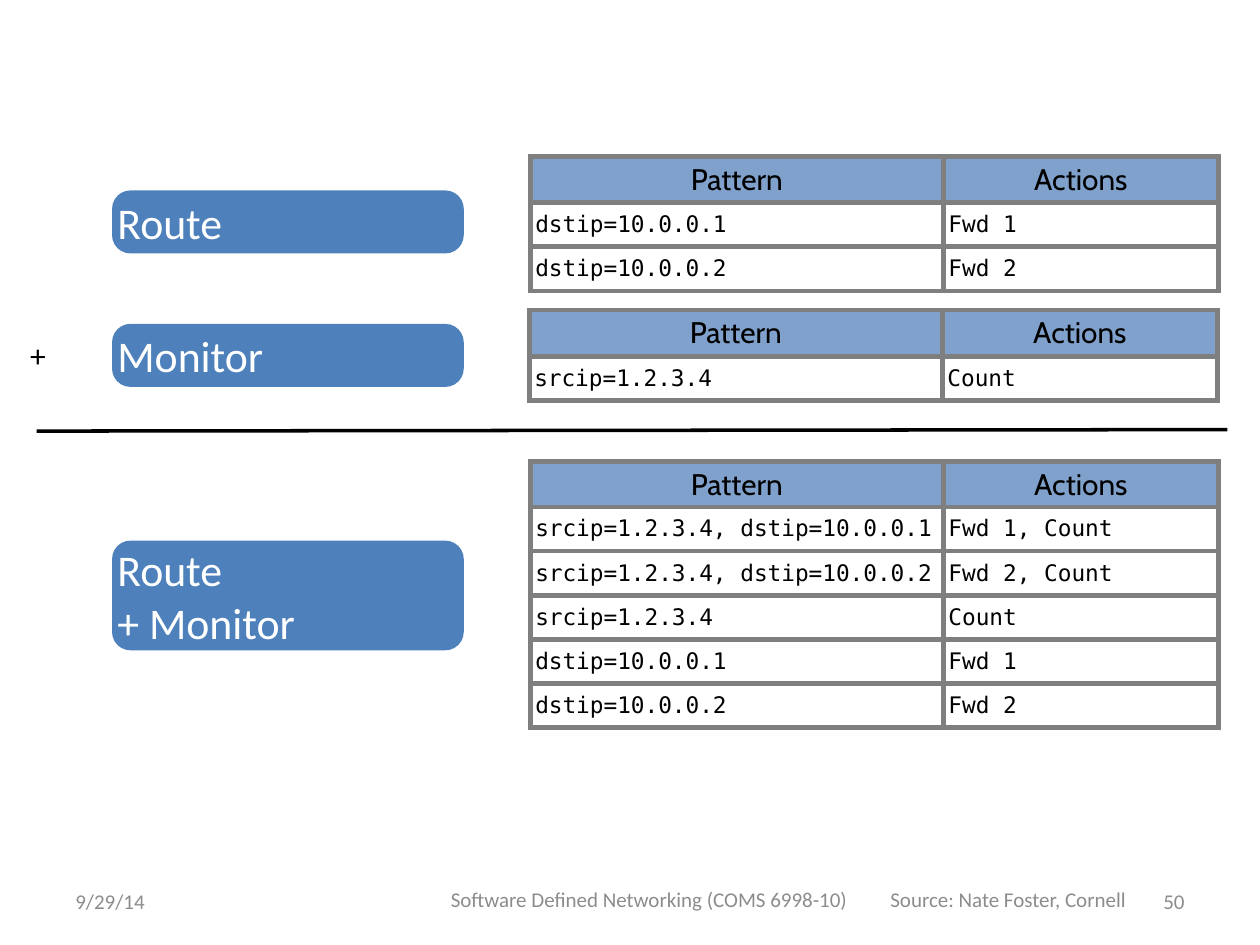
from collections import namedtuple
from dataclasses import dataclass

from lxml import etree
from pptx import Presentation
from pptx import util as u
from pptx.dml.color import RGBColor
from pptx.enum import shapes, text
from pptx.oxml import ns

Box = namedtuple("Box", "left top width height")
Cm = u.Cm
ALIGN = text.PP_ALIGN


@dataclass(frozen=True)
class Theme:
    pill: str = "4E81BC"
    header: str = "80A1CB"
    grid: str = "7F7F7F"
    muted: str = "8C8C8C"
    black: str = "000000"
    white: str = "FFFFFF"
    sans: str = "Calibri"
    heading: str = "Cabin"
    mono: str = "DejaVu Sans Mono"
    label_size: int = 25
    sign_size: int = 18
    header_size: int = 17
    cell_size: int = 13
    footer_size: int = 12
    grid_width: int = 3
    rule_width: int = 2


THEME = Theme()
PILL_LEFT, PILL_WIDTH, PILL_RADIUS = 2.26, 7.09, 0.37
COLUMNS = (8.33, 5.54)
HEADER_HEIGHT, ROW_HEIGHT = 0.92, 0.89
CELL_MARGIN = 0.1


def rgb(value):
    return RGBColor.from_string(value)


def write(frame, content, size, font=THEME.sans, color=THEME.black,
          align=ALIGN.LEFT, margin=None):
    frame.vertical_anchor = text.MSO_ANCHOR.MIDDLE
    if margin is not None:
        frame.margin_left = frame.margin_right = Cm(margin)
        frame.margin_top = frame.margin_bottom = Cm(margin)
    for index, line in enumerate(content.split("\n")):
        para = frame.add_paragraph() if index else frame.paragraphs[0]
        para.alignment = align
        span = para.add_run()
        span.text = line
        span.font.size = u.Pt(size)
        span.font.name = font
        span.font.color.rgb = rgb(color)


def add_pill(page, box, label):
    pill = page.shapes.add_shape(shapes.MSO_SHAPE.ROUNDED_RECTANGLE, *map(Cm, box))
    pill.adjustments[0] = PILL_RADIUS / box.height
    pill.shadow.inherit = False
    pill.fill.solid()
    pill.fill.fore_color.rgb = rgb(THEME.pill)
    pill.line.fill.background()
    write(pill.text_frame, label, THEME.label_size, color=THEME.white, margin=0)


def add_cell_borders(cell):
    properties = cell._tc.get_or_add_tcPr()
    for side in ("lnL", "lnR", "lnT", "lnB"):
        line = etree.SubElement(properties, ns.qn(f"a:{side}"),
                                w=str(u.Pt(THEME.grid_width)))
        fill = etree.SubElement(line, ns.qn("a:solidFill"))
        etree.SubElement(fill, ns.qn("a:srgbClr"), val=THEME.grid)


def add_rules_table(page, left, top, rules):
    rows = [("Pattern", "Actions"), *rules]
    box = Box(left, top, sum(COLUMNS), HEADER_HEIGHT + ROW_HEIGHT * len(rules))
    table = page.shapes.add_table(len(rows), len(COLUMNS), *map(Cm, box)).table
    table.horz_banding = False
    for column, width in zip(table.columns, COLUMNS):
        column.width = Cm(width)
    for r, values in enumerate(rows):
        is_header = r == 0
        table.rows[r].height = Cm(HEADER_HEIGHT if is_header else ROW_HEIGHT)
        for c, value in enumerate(values):
            cell = table.cell(r, c)
            add_cell_borders(cell)
            cell.fill.solid()
            cell.fill.fore_color.rgb = rgb(THEME.header if is_header else THEME.white)
            cell.vertical_anchor = text.MSO_ANCHOR.MIDDLE
            cell.margin_left = cell.margin_right = Cm(CELL_MARGIN)
            cell.margin_top = cell.margin_bottom = Cm(CELL_MARGIN)
            if is_header:
                style = dict(size=THEME.header_size, font=THEME.heading,
                             align=ALIGN.CENTER)
            else:
                style = dict(size=THEME.cell_size, font=THEME.mono)
            write_cell(cell, value, **style)


def write_cell(cell, value, size, font, align=ALIGN.LEFT):
    para = cell.text_frame.paragraphs[0]
    para.alignment = align
    span = para.add_run()
    span.text = value
    span.font.size = u.Pt(size)
    span.font.name = font
    span.font.bold = False
    span.font.color.rgb = rgb(THEME.black)


def add_policy(page, label, pill_top, pill_height, table_left, table_top, rules):
    add_pill(page, Box(PILL_LEFT, pill_top, PILL_WIDTH, pill_height), label)
    add_rules_table(page, table_left, table_top, rules)


def add_sum_line(page, start, end):
    rule = page.shapes.add_connector(shapes.MSO_CONNECTOR.STRAIGHT,
                                     *map(Cm, start + end))
    rule.line.color.rgb = rgb(THEME.black)
    rule.line.width = u.Pt(THEME.rule_width)
    etree.SubElement(rule._element.spPr, ns.qn("a:effectLst"))


def add_plus(page, box):
    frame = page.shapes.add_textbox(*map(Cm, box)).text_frame
    frame.word_wrap = False
    frame.auto_size = text.MSO_AUTO_SIZE.SHAPE_TO_FIT_TEXT
    write(frame, "+", THEME.sign_size, margin=0)


def add_footer(page, box):
    parts = (
        ("9/29/14", 0, 0.08, 5.92, ALIGN.LEFT),
        ("Software Defined Networking (COMS 6998-10) ", 7.42, 0, 8.89, ALIGN.CENTER),
        ("Source: Nate Foster, Cornell", 14.61, 0, 8.89, ALIGN.CENTER),
        ("50", 16.94, 0.08, 5.92, ALIGN.RIGHT),
    )
    for content, x, y, width, align in parts:
        place = Box(box.left + x, box.top + y, width, box.height - y)
        frame = page.shapes.add_textbox(*map(Cm, place)).text_frame
        frame.word_wrap = True
        write(frame, content, THEME.footer_size, color=THEME.muted, align=align)


def main():
    deck = Presentation()
    deck.slide_width, deck.slide_height = Cm(25.4), Cm(19.05)
    page = deck.slides.add_slide(deck.slide_layouts.get_by_name("Blank"))

    source = "srcip=1.2.3.4"
    route = [("dstip=10.0.0.1", "Fwd 1"), ("dstip=10.0.0.2", "Fwd 2")]
    monitor = [(source, "Count")]
    both = [(f"{source}, {pattern}", f"{action}, Count") for pattern, action in route]

    add_policy(page, "Route", 3.84, 1.27, 10.69, 3.15, route)
    add_policy(page, "Monitor", 6.53, 1.27, 10.67, 6.25, monitor)
    add_plus(page, Box(0.61, 6.78, 0.33, 0.76))
    add_sum_line(page, (0.74, 8.69), (24.74, 8.66))
    add_policy(page, "Route\n+ Monitor", 10.9, 2.21, 10.69, 9.3,
               both + monitor + route)
    add_footer(page, Box(1.27, 17.58, 22.86, 1.09))
    deck.save("out.pptx")


if __name__ == "__main__":
    main()
